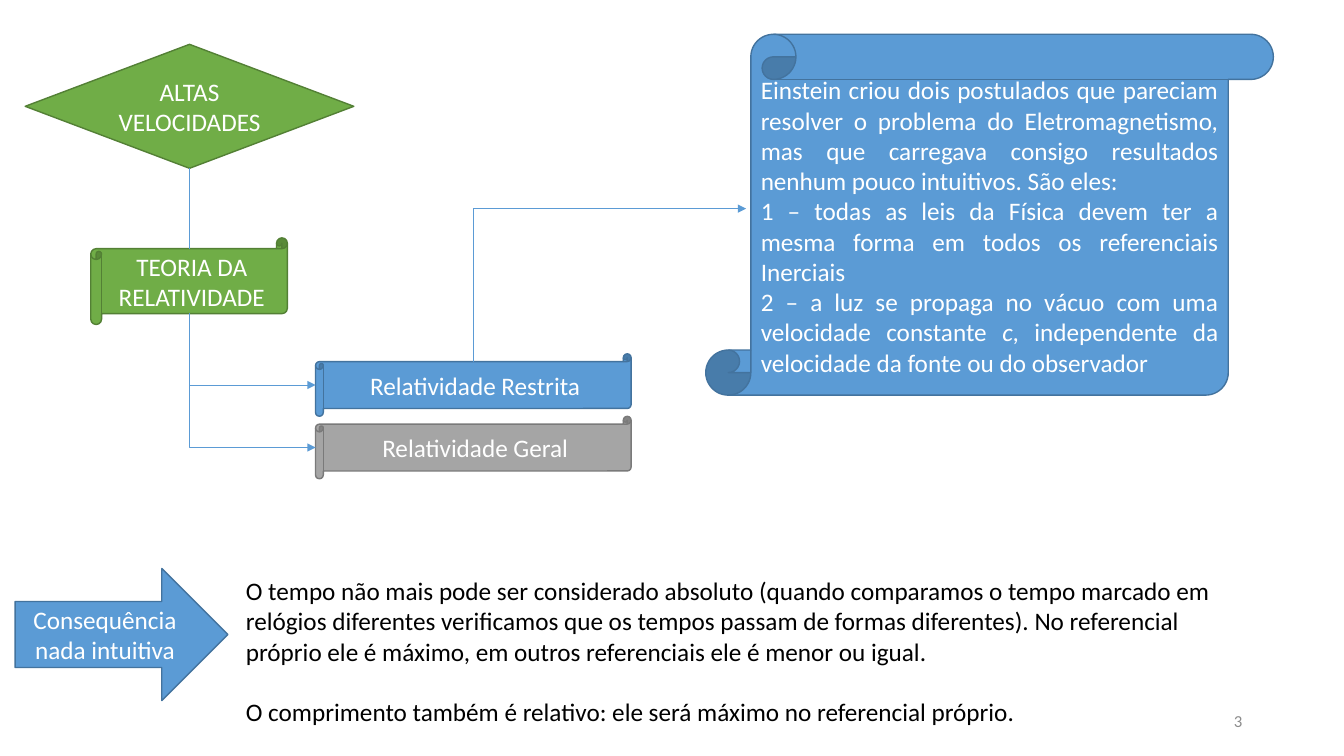
from pptx import Presentation
from pptx.util import Inches, Pt
from pptx.dml.color import RGBColor
from pptx.enum.shapes import MSO_CONNECTOR, MSO_SHAPE
from pptx.enum.text import MSO_ANCHOR, PP_ALIGN
from pptx.oxml.ns import qn
from lxml import etree

DIAMOND, ARROW = MSO_SHAPE.DIAMOND, MSO_SHAPE.RIGHT_ARROW
WIDE, TALL = MSO_SHAPE.HORIZONTAL_SCROLL, MSO_SHAPE.VERTICAL_SCROLL
LEFT, MID, RIGHT, JUST = PP_ALIGN.LEFT, PP_ALIGN.CENTER, PP_ALIGN.RIGHT, PP_ALIGN.JUSTIFY
STRAIGHT, ELBOW = MSO_CONNECTOR.STRAIGHT, MSO_CONNECTOR.ELBOW
TOP, CENTER = MSO_ANCHOR.TOP, MSO_ANCHOR.MIDDLE

# Content: paragraphs are strings, or tuples of runs with every second one italic
GREEN, BLUE, GRAY = ("70AD47", "538035"), ("5B9BD5", "43739E"), ("A5A5A5", "7A7A7A")
POSTULATES = [
    "Einstein criou dois postulados que pareciam resolver o problema do "
    "Eletromagnetismo, mas que carregava consigo resultados nenhum pouco "
    "intuitivos. São eles:",
    "1 – todas as leis da Física devem ter a mesma forma em todos os "
    "referenciais Inerciais",
    ("2 – a luz se propaga no vácuo com uma velocidade constante ", "c",
     ", independente da velocidade da fonte ou do observador"),
]
EFFECTS = [
    "O tempo não mais pode ser considerado absoluto (quando comparamos o tempo "
    "marcado em relógios diferentes verificamos que os tempos passam de formas "
    "diferentes). No referencial próprio ele é máximo, em outros referenciais "
    "ele é menor ou igual.",
    "O comprimento também é relativo: ele será máximo no referencial próprio.",
]
BRANCHES = [("Relatividade Restrita", BLUE), ("Relatividade Geral", GRAY)]

# Layout in inches
TRUNK = 1.88
B_LEFT, B_TOP, B_WIDE, B_HIGH = 3.13, 3.51, 3.13, 0.62
RISE = B_LEFT + B_WIDE / 2

NODES = [
    (DIAMOND, (0.25, 0.44, 3.26, 1.23), GREEN, ["ALTAS VELOCIDADES"], MID),
    (WIDE, (0.9, 2.36, 1.95, 0.86), GREEN, ["TEORIA DA RELATIVIDADE"], MID),
    (TALL, (7, 0.34, 5.63, 3.58), BLUE, POSTULATES, JUST),
    (ARROW, (0.15, 5.64, 2.11, 1.31), BLUE, ["Consequência nada intuitiva"], MID),
]
BENDS = [((RISE, 3.59), (7.4, 2.07))]
for i, (label, tone) in enumerate(BRANCHES):
    top = B_TOP + i * B_HIGH
    NODES.append((WIDE, (B_LEFT, top, B_WIDE, B_HIGH), tone, [label], MID))
    BENDS.append(((TRUNK, 3.11), (B_LEFT, top + B_HIGH / 2)))


def color(code):
    return RGBColor.from_string(code)


def write(shape, paras, ink="FFFFFF", size=18, align=MID, anchor=CENTER, gap=0):
    frame = shape.text_frame
    frame.word_wrap, frame.vertical_anchor = True, anchor
    for i, para in enumerate(paras):
        p = frame.add_paragraph() if i else frame.paragraphs[0]
        p.alignment = align
        p.space_before = Pt(gap if i else 0)
        for j, part in enumerate((para,) if isinstance(para, str) else para):
            run = p.add_run()
            run.text = part
            run.font.name, run.font.size = "Calibri", Pt(size)
            run.font.italic = j % 2 == 1
            run.font.color.rgb = color(ink)


def link(kind, start, end):
    line = slide.shapes.add_connector(kind, *map(Inches, start + end))
    line.line.color.rgb = color(BLUE[0])
    line.line.width = Pt(0.5)
    etree.SubElement(line._element.spPr, qn("a:effectLst"))
    return line


def bend(start, end):
    """Run vertically first, then right: a one-corner elbow on its side."""
    (x1, y1), (x2, y2) = start, end
    wide, high = abs(y2 - y1), x2 - x1
    left, top = (x1 + x2 - wide) / 2, (y1 + y2 - high) / 2
    line = link(ELBOW, (left, top), (left + wide, top + high))
    props = line._element.spPr
    props.find(qn("a:prstGeom")).set("prst", "bentConnector2")
    frame = props.find(qn("a:xfrm"))
    frame.set("flipH", "1")
    if y2 < y1:
        frame.set("flipV", "1")
    line.rotation = 0
    frame.set("rot", str((90 if y2 < y1 else 270) * 60000))
    tail = etree.SubElement(line.line._get_or_add_ln(), qn("a:tailEnd"))
    tail.set("type", "triangle")


deck = Presentation()
deck.slide_width, deck.slide_height = Inches(13.33), Inches(7.5)
slide = deck.slides.add_slide(deck.slide_layouts[6])

# Flow shapes
for kind, box, (fill, edge), paras, align in NODES:
    node = slide.shapes.add_shape(kind, *map(Inches, box))
    node.shadow.inherit = False
    node.fill.solid()
    node.fill.fore_color.rgb = color(fill)
    node.line.color.rgb = color(edge)
    node.line.width = Pt(1)
    write(node, paras, align=align)

# Connectors
link(STRAIGHT, (TRUNK, 1.67), (TRUNK, 2.47))
for start, end in BENDS:
    bend(start, end)

# Consequences and page number
note = slide.shapes.add_textbox(*map(Inches, (2.34, 5.66, 9.91, 1.62)))
write(note, EFFECTS, ink="000000", align=LEFT, anchor=TOP, gap=21.5)
page = slide.shapes.add_textbox(*map(Inches, (12.06, 6.95, 0.36, 0.4)))
write(page, ["3"], ink="8C8C8C", size=12, align=RIGHT)

deck.save("out.pptx")
